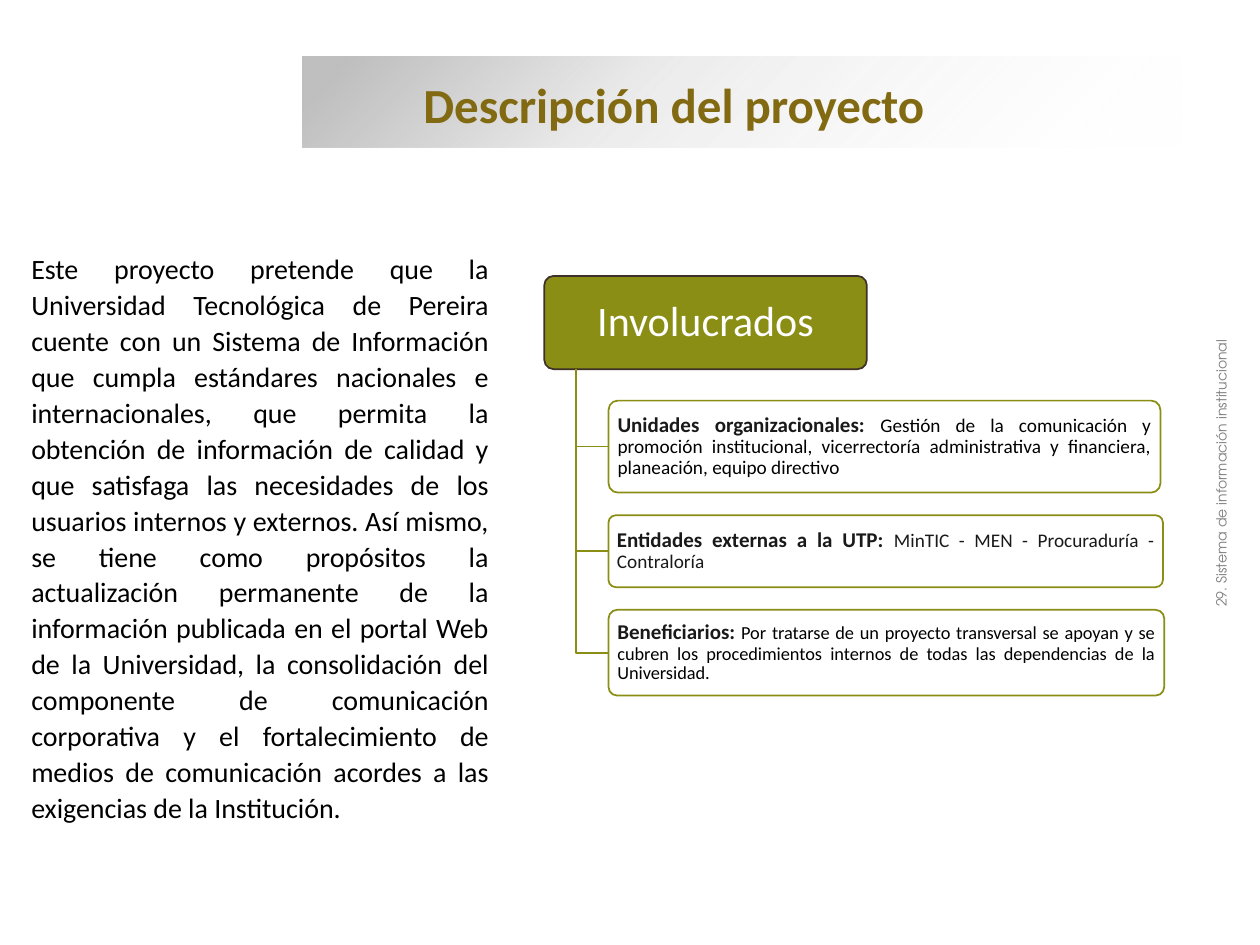
import pptx
import pptx.util
import pptx.dml.color
import pptx.enum.shapes
import pptx.enum.text
import pptx.oxml
import pptx.oxml.ns
from pptx.util import Inches

COLORS = {"olive": "8B8E14", "brown": "3F3029", "title": "826A12", "white": "FFFFFF",
          "black": "000000", "dark": "191919", "gray": "808080", "silver": "BFBFBF"}
ALIGN = pptx.enum.text.PP_ALIGN
ANCHOR = pptx.enum.text.MSO_ANCHOR
SHAPE = pptx.enum.shapes.MSO_SHAPE


def rgb(name):
    return pptx.dml.color.RGBColor.from_string(COLORS[name])


def write(sp, runs, align, anchor, spacing=1.0, margins=(0.1, 0.05), font="Calibri"):
    """Fill a shape with one paragraph; runs are (text, size, color, bold)."""
    tf = sp.text_frame
    tf.word_wrap = True
    tf.auto_size = pptx.enum.text.MSO_AUTO_SIZE.NONE
    tf.vertical_anchor = anchor
    tf.margin_left = tf.margin_right = Inches(margins[0])
    tf.margin_top = tf.margin_bottom = Inches(margins[1])
    p = tf.paragraphs[0]
    p.alignment = align
    p.line_spacing = spacing
    for text, size, color, bold in runs:
        r = p.add_run()
        r.text = text
        r.font.name = font
        r.font.size = pptx.util.Pt(size)
        r.font.bold = bold
        r.font.color.rgb = rgb(color)


prs = pptx.Presentation()
prs.slide_width, prs.slide_height = Inches(10), Inches(7.5)
s = prs.slides.add_slide(prs.slide_layouts[5])

# Title over a fading band
band = s.shapes.add_shape(SHAPE.RECTANGLE, Inches(2.4), Inches(0.45), Inches(6.98), Inches(0.72))
band.shadow.inherit = False
band.line.fill.background()
stops = "".join(
    f'<a:gs pos="{pos}000"><a:srgbClr val="{COLORS[color]}"><a:alpha val="{alpha}000"/></a:srgbClr></a:gs>'
    for pos, color, alpha in [(5, "silver", 100), (37, "silver", 31), (100, "white", 0)])
band._element.spPr.find(pptx.oxml.ns.qn("a:prstGeom")).addnext(pptx.oxml.parse_xml(
    f'<a:gradFill {pptx.oxml.ns.nsdecls("a")} rotWithShape="1"><a:gsLst>{stops}</a:gsLst>'
    '<a:lin ang="2700000" scaled="0"/></a:gradFill>'))

title = s.shapes.title
title.left, title.top, title.width, title.height = Inches(3.26), Inches(0.54), Inches(6.2), Inches(0.57)
write(title, [("Descripción del proyecto", 28, "title", True)], ALIGN.LEFT, ANCHOR.MIDDLE)
band._element.addnext(title._element)

# Stakeholder tree: a root, and boxes joined to its trunk
boxes = [
    (4.32, 2.19, 2.56, 0.74, "olive", "brown", ALIGN.CENTER,
     [("Involucrados", 24, "white", False)]),
    (4.83, 3.18, 4.38, 0.73, "white", "olive", ALIGN.JUSTIFY,
     [("Unidades organizacionales: ", 12, "dark", True),
      ("Gestión de la comunicación y promoción institucional, vicerrectoría administrativa "
       "y financiera, planeación, equipo directivo", 11, "black", False)]),
    (4.83, 4.09, 4.4, 0.57, "white", "olive", ALIGN.JUSTIFY,
     [("Entidades externas a la UTP: ", 12, "dark", True),
      ("MinTIC - MEN - Procuraduría - Contraloría", 11, "dark", False)]),
    (4.83, 4.84, 4.41, 0.68, "white", "olive", ALIGN.JUSTIFY,
     [("Beneficiarios:", 12, "dark", True),
      (" ", 10.5, "dark", True),
      ("Por tratarse de un proyecto transversal se apoyan y se cubren los procedimientos "
       "internos de todas las dependencias de la Universidad.", 10.5, "black", False)]),
]
trunk_x, trunk_top = 4.57, 2.93
for i, (x, y, w, h, fill, line, align, runs) in enumerate(boxes):
    if i > 0:
        mid = y + h / 2
        fb = s.shapes.build_freeform(Inches(trunk_x), Inches(trunk_top))
        fb.add_line_segments([(Inches(trunk_x), Inches(mid)), (Inches(x), Inches(mid))], close=False)
        branch = fb.convert_to_shape()
        branch.shadow.inherit = False
        branch.fill.background()
        branch.line.color.rgb = rgb("olive")
        branch.line.width = pptx.util.Pt(1)
    box = s.shapes.add_shape(SHAPE.ROUNDED_RECTANGLE, Inches(x), Inches(y), Inches(w), Inches(h))
    box.adjustments[0] = 0.1
    box.shadow.inherit = False
    box.fill.solid()
    box.fill.fore_color.rgb = rgb(fill)
    box.line.color.rgb = rgb(line)
    box.line.width = pptx.util.Pt(1)
    write(box, runs, align, ANCHOR.MIDDLE, 0.9, (0.05, 0.04))

# Project description
body = s.shapes.add_textbox(Inches(0.15), Inches(1.93), Inches(3.83), Inches(4.71))
write(body, [(
    "Este proyecto pretende que la Universidad Tecnológica de Pereira cuente con un Sistema de "
    "Información que cumpla estándares nacionales e internacionales, que permita la obtención de "
    "información de calidad y que satisfaga las necesidades de los usuarios internos y externos. "
    "Así mismo, se tiene como propósitos la actualización permanente de la información publicada "
    "en el portal Web de la Universidad, la consolidación del componente de comunicación "
    "corporativa y el fortalecimiento de medios de comunicación acordes a las exigencias de la "
    "Institución.", 16, "black", False)], ALIGN.JUSTIFY, ANCHOR.TOP, 1.07)

# Section name along the right edge
side = s.shapes.add_textbox(Inches(7.34), Inches(3.57), Inches(4.84), Inches(0.37))
side.rotation = 270
write(side, [("29. Sistema de información institucional", 8, "gray", False)],
      ALIGN.CENTER, ANCHOR.TOP, font="TeX Gyre Adventor")

prs.save("out.pptx")
